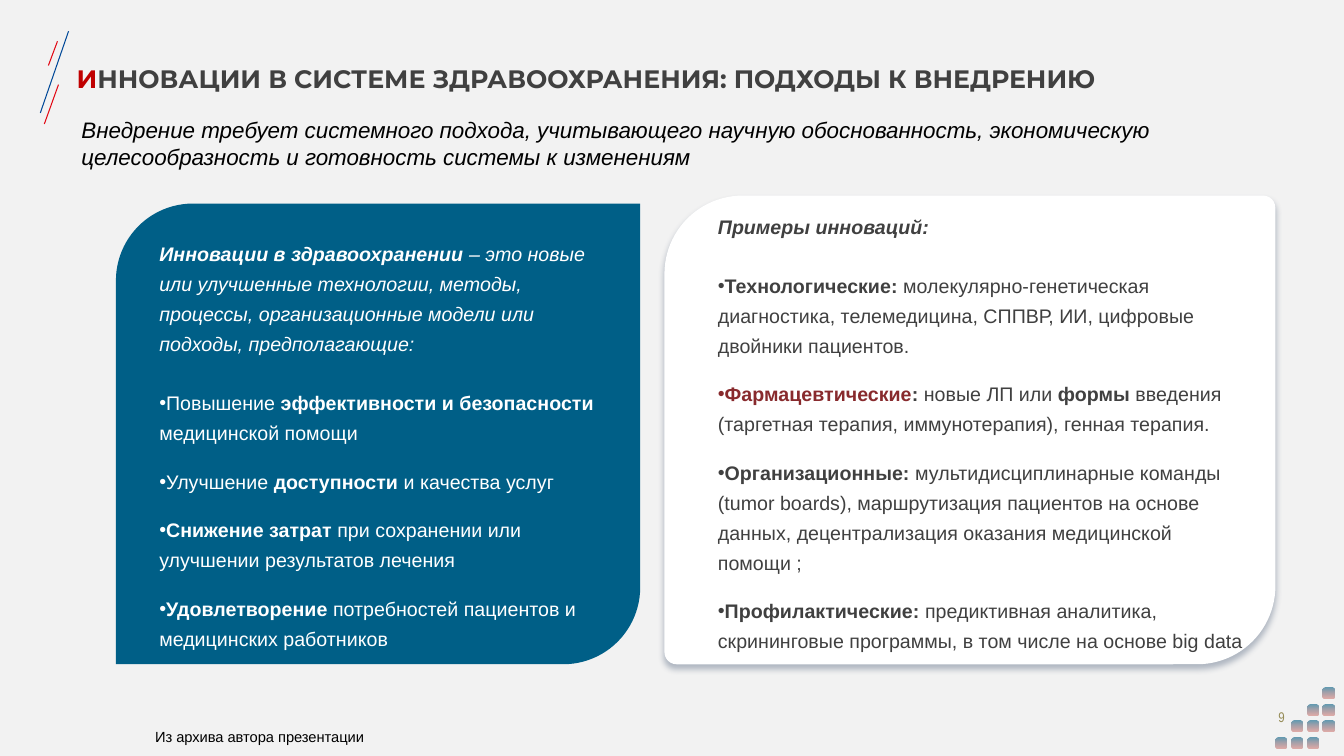
"""Build the slide on approaches to introducing innovations in health care."""
from lxml import etree
from pptx import Presentation
from pptx.dml.color import RGBColor
from pptx.enum import shapes, text
from pptx.oxml import ns
from pptx.util import Inches, Pt

theme = dict(
    back="F2F2F2", blue="005F87", white="FFFFFF", dark="404040", black="000000",
    red="C00000", wine="882A2D", rust="C3443B", sand="948A54",
    navy="004898", scarlet="E20713", shade="4C5E79",
    head=18, lead=16, body=14, note=10.5, page=10,
    sans="Arial", slim="Arial Narrow", bold="Montserrat")


def tint(name):
    return RGBColor.from_string(theme[name])


def write(box, paras, size, font="sans", color="black", **looks):
    """Fill a box; a run is (text, marks, colour), with marks b for bold and i for italic."""
    frame = box.text_frame
    base = dict(word_wrap=True, auto_size=text.MSO_AUTO_SIZE.NONE,
                vertical_anchor=text.MSO_ANCHOR.TOP)
    for key, val in {**base, **looks}.items():
        setattr(frame, key, val)
    for num, runs in enumerate(paras):
        para = frame.add_paragraph() if num else frame.paragraphs[0]
        para.alignment = text.PP_ALIGN.LEFT
        for words, marks, *hue in runs:
            run = para.add_run()
            run.text = words
            form = dict(size=Pt(theme[size]), name=theme[font],
                        bold="b" in marks, italic="i" in marks)
            for key, val in form.items():
                setattr(run.font, key, val)
            run.font.color.rgb = tint(hue[0] if hue else color)
    return frame


deck = Presentation()
deck.slide_width, deck.slide_height = Inches(13.33), Inches(7.5)
slide = deck.slides.add_slide(deck.slide_layouts[3])
slide.background.fill.solid()
slide.background.fill.fore_color.rgb = tint("back")
tree = slide.shapes
title, left, right = tree.placeholders

strokes = [(0.48, 0.65, 0.57, 0.41, "scarlet"),
           (0.4, 1.12, 0.68, 0.31, "navy"),
           (0.44, 1.23, 0.58, 0.84, "scarlet")]
for *ends, hue in strokes:
    line = tree.add_connector(shapes.MSO_CONNECTOR.STRAIGHT, *map(Inches, ends))
    line.line.color.rgb = tint(hue)
    line.line.width = Pt(0.75)
    etree.SubElement(line.element.spPr, ns.qn("a:effectLst"))

for col in range(4):
    for row in range(3 - col, min(4, 6 - col)):
        dot = tree.add_shape(shapes.MSO_SHAPE.ROUNDED_RECTANGLE,
                             Inches(12.65 + 0.157 * col), Inches(6.82 + 0.166 * row),
                             Inches(0.11), Inches(0.11))
        dot.shadow.inherit = False
        dot.line.fill.background()
        dot.fill.gradient()
        dot.fill.gradient_angle = 270
        for stop, hue, place in zip(dot.fill.gradient_stops, ("blue", "rust"), (0, 1)):
            stop.color.rgb = tint(hue)
            stop.position = place
        for clr, alpha in zip(dot.element.spPr.iter(ns.qn("a:srgbClr")), (60, 40)):
            etree.SubElement(clr, ns.qn("a:alpha"), val=str(alpha * 1000))

cards = [((1.15, 2.02, 5.2, 4.57), "blue", 0), ((6.59, 1.94, 6.06, 4.65), "white", 0.026)]
for area, hue, bend in cards:
    card = tree.add_shape(shapes.MSO_SHAPE.ROUND_2_DIAG_RECTANGLE, *map(Inches, area))
    card.adjustments[0], card.adjustments[1] = 0.167, bend
    card.shadow.inherit = False
    card.line.fill.background()
    card.fill.solid()
    card.fill.fore_color.rgb = tint(hue)
glow = etree.SubElement(card.element.spPr.find(ns.qn("a:effectLst")), ns.qn("a:outerShdw"),
                        blurRad=str(Pt(4)), dist=str(Pt(3)), dir="5400000",
                        algn="t", rotWithShape="0")
clr = etree.SubElement(glow, ns.qn("a:srgbClr"), val=theme["shade"])
etree.SubElement(clr, ns.qn("a:alpha"), val="40000")

spots = [(title, (0.66, 0.47, 10.73, 0.61)),
         (left, (1.48, 2.29, 4.57, 4.14)),
         (right, (7.02, 2.02, 5.55, 4.57))]
for box, area in spots:
    box.left, box.top, box.width, box.height = map(Inches, area)
    card.element.getparent().append(box.element)

write(title, [[("И", "b", "red"),
               ("ННОВАЦИИ В СИСТЕМЕ ЗДРАВООХРАНЕНИЯ: ПОДХОДЫ К ВНЕДРЕНИЮ", "b")]],
      "head", "bold", "dark", vertical_anchor=text.MSO_ANCHOR.MIDDLE)

goals = [
    [("Инновации в здравоохранении ", "bi"),
     ("– это новые или улучшенные технологии, методы, процессы, "
      "организационные модели или подходы, предполагающие:", "i")],
    [("Повышение ", ""), ("эффективности и безопасности", "b"), (" медицинской помощи", "")],
    [("Улучшение ", ""), ("доступности ", "b"), ("и качества услуг", "")],
    [("Снижение затрат ", "b"), ("при сохранении или улучшении результатов лечения", "")],
    [("Удовлетворение", "b"), (" потребностей пациентов и медицинских работников", "")]]
kinds = [
    [("Примеры инноваций:", "bi")],
    [("Технологические:", "b"),
     (" молекулярно-генетическая диагностика, телемедицина, СППВР, ИИ, "
      "цифровые двойники пациентов.", "")],
    [("Фармацевтические", "b", "wine"), (":", "b"), (" новые ЛП или ", ""), ("формы", "b"),
     (" введения (таргетная терапия, иммунотерапия), генная терапия.", "")],
    [("Организационные:", "b"),
     (" мультидисциплинарные команды (tumor boards), маршрутизация пациентов "
      "на основе данных, децентрализация оказания медицинской помощи ;", "")],
    [("Профилактические:", "b"),
     (" предиктивная аналитика, скрининговые программы, "
      "в том числе на основе big data", "")]]
for box, paras, hue in ((left, goals, "white"), (right, kinds, "dark")):
    frame = write(box, paras, "body", color=hue)
    for num, para in enumerate(frame.paragraphs):
        props = para._p.get_or_add_pPr()
        props.set("marL", "0")
        props.set("indent", "0")
        if num:
            etree.SubElement(props, ns.qn("a:buChar"), char="•")
        else:
            etree.SubElement(props, ns.qn("a:buNone"))
        gaps = dict(line_spacing=Pt(21.4), space_after=Pt(10.3),
                    space_before=Pt((0, 10.3, 3)[min(num, 2)]))
        for key, val in gaps.items():
            setattr(para, key, val)

notes = [
    ((0.71, 1.1, 11, 0.64), "lead", "sans", "black", "i",
     "Внедрение требует системного подхода, учитывающего научную обоснованность, "
     "экономическую целесообразность и готовность системы к изменениям"),
    ((1.44, 7.17, 6.67, 0.28), "note", "sans", "black", "", "Из архива автора презентации"),
    ((12.52, 6.91, 0.38, 0.4), "page", "slim", "sand", "", "9")]
for area, size, font, hue, marks, words in notes:
    box = tree.add_textbox(*map(Inches, area))
    frame = write(box, [[(words, marks)]], size, font, hue)
frame.vertical_anchor = text.MSO_ANCHOR.MIDDLE
frame.paragraphs[0].alignment = text.PP_ALIGN.CENTER

deck.save("out.pptx")
